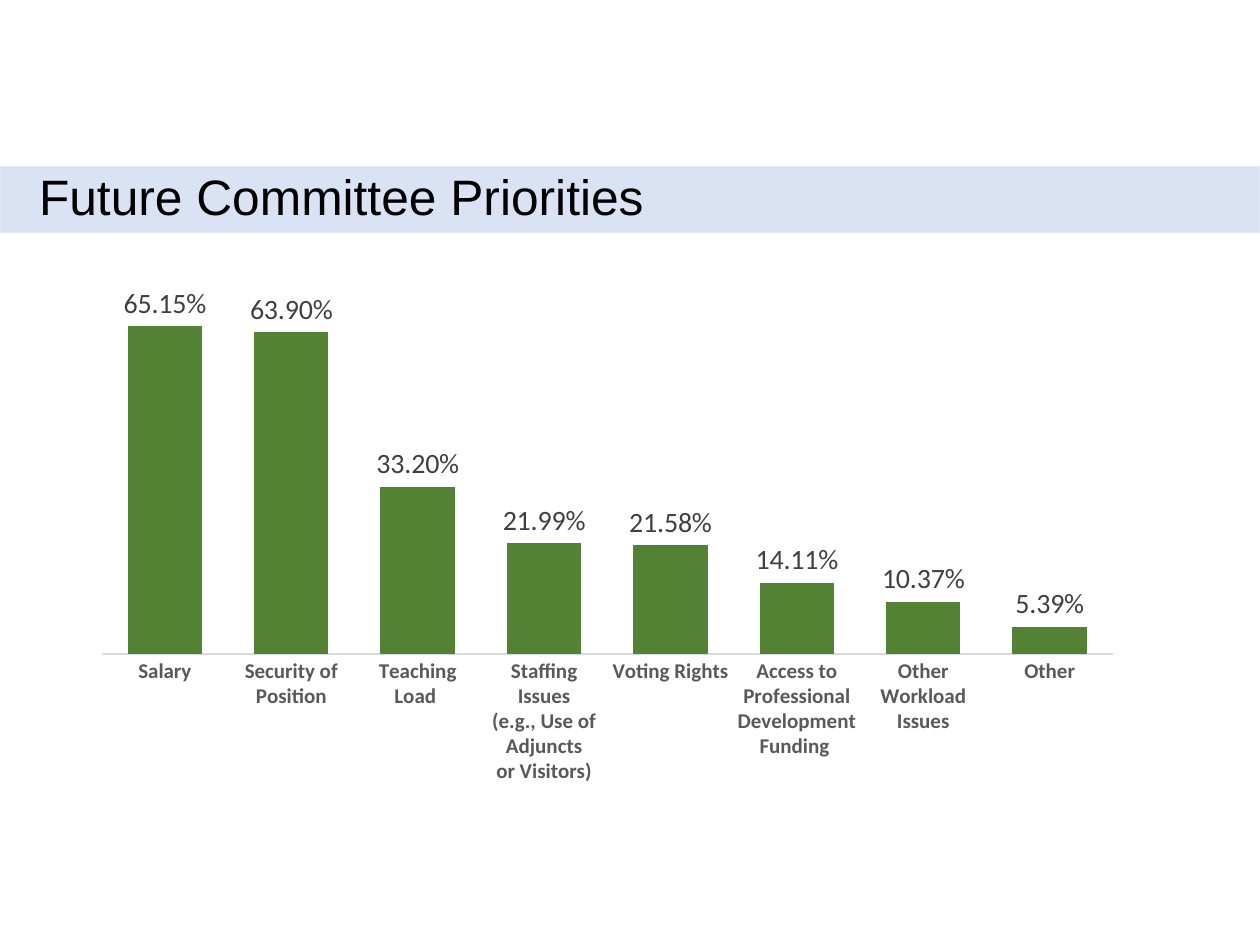
from lxml.etree import SubElement
from pptx import Presentation
from pptx.chart.data import CategoryChartData
from pptx.dml.color import RGBColor
from pptx.enum.chart import XL_CHART_TYPE, XL_LABEL_POSITION, XL_TICK_MARK
from pptx.enum.text import MSO_ANCHOR, MSO_AUTO_SIZE, PP_ALIGN
from pptx.oxml.ns import qn
from pptx.util import Inches, Pt

BLACK = RGBColor(0x00, 0x00, 0x00)
BAND = RGBColor(0xDA, 0xE3, 0xF3)
EDGE = RGBColor(0xDE, 0xEB, 0xF7)
GREEN = RGBColor(0x54, 0x82, 0x35)
GRAY = RGBColor(0x59, 0x59, 0x59)
DARK = RGBColor(0x40, 0x40, 0x40)
RULE = RGBColor(0xD9, 0xD9, 0xD9)

VOTES = [
    ("Salary", 0.6515),
    ("Security of\nPosition", 0.6390),
    ("Teaching Load ", 0.3320),
    ("Staffing Issues\n(e.g., Use of Adjuncts\nor Visitors)", 0.2199),
    ("Voting Rights", 0.2158),
    ("Access to\nProfessional Development\nFunding ", 0.1411),
    ("Other\nWorkload\nIssues", 0.1037),
    ("Other", 0.0539),
]


class Deck:
    head = "Arial"
    body = "Calibri"

    def __init__(self, wide, high):
        self.prs = Presentation()
        self.prs.slide_width = Inches(wide)
        self.prs.slide_height = Inches(high)
        self.slide = self.prs.slides.add_slide(self.prs.slide_layouts[5])

    def area(self, left, top, wide, high):
        w, h = self.prs.slide_width, self.prs.slide_height
        return int(left * w), int(top * h), int(wide * w), int(high * h)

    def style(self, font, name, size, color, bold=False):
        font.name, font.size, font.bold = name, Pt(size), bold
        font.color.rgb = color

    def title(self, text, *share):
        band = self.slide.shapes.title
        band.left, band.top, band.width, band.height = self.area(*share)
        band.fill.solid()
        band.fill.fore_color.rgb = BAND
        band.line.color.rgb = EDGE
        band.line.width = Pt(0.75)
        frame = band.text_frame
        frame.auto_size = MSO_AUTO_SIZE.NONE
        frame.word_wrap = True
        frame.vertical_anchor = MSO_ANCHOR.MIDDLE
        frame.margin_left, frame.margin_right = Inches(0.31), Inches(0.07)
        frame.margin_top = frame.margin_bottom = Inches(0.04)
        para = frame.paragraphs[0]
        para.alignment = PP_ALIGN.LEFT
        para.line_spacing = 0.9
        run = para.add_run()
        run.text = text
        self.style(run.font, self.head, 28.4, BLACK)

    def bars(self, name, rows, *share):
        data = CategoryChartData(number_format="0.00%")
        data.categories = [label for label, _ in rows]
        data.add_series(name, [value for _, value in rows])
        kind = XL_CHART_TYPE.COLUMN_CLUSTERED
        chart = self.slide.shapes.add_chart(kind, *self.area(*share), data).chart
        chart.has_legend = chart.has_title = False
        self.style(chart.font, self.body, 10, BLACK)

        plot = chart.plots[0]
        plot.gap_width, plot.overlap = 70, -27
        plot.vary_by_categories = False
        fill = plot.series[0].format.fill
        fill.solid()
        fill.fore_color.rgb = GREEN
        plot.has_data_labels = True
        tags = plot.data_labels
        tags.show_value = True
        tags.number_format, tags.number_format_is_linked = "0.00%", False
        tags.position = XL_LABEL_POSITION.OUTSIDE_END
        self.style(tags.font, self.body, 16, DARK)

        base = chart.category_axis
        base.major_tick_mark = base.minor_tick_mark = XL_TICK_MARK.NONE
        base.format.line.color.rgb = RULE
        base.format.line.width = Pt(0.75)
        self.style(base.tick_labels.font, self.body, 12, GRAY, True)
        scale = chart.value_axis
        scale.minimum_scale, scale.maximum_scale = 0, 0.7
        scale.has_major_gridlines = scale.visible = False
        self.inner(chart, x=0.02, y=0.03, w=0.96, h=0.7)

    def inner(self, chart, **share):
        area = chart.plots[0]._element.getparent()
        for old in area.findall(qn("c:layout")):
            area.remove(old)
        layout = SubElement(area, qn("c:layout"))
        area.insert(0, layout)
        spot = SubElement(layout, qn("c:manualLayout"))
        parts = {"layoutTarget": "inner", "xMode": "edge", "yMode": "edge", **share}
        for tag, value in parts.items():
            SubElement(spot, qn(f"c:{tag}")).set("val", str(value))

    def save(self):
        self.prs.save("out.pptx")


def main():
    deck = Deck(10, 7.5)
    deck.title("Future Committee Priorities", 0, 0.176, 1, 0.07)
    deck.bars("Series 1", VOTES, 0.064, 0.303, 0.836, 0.533)
    deck.save()


if __name__ == "__main__":
    main()
